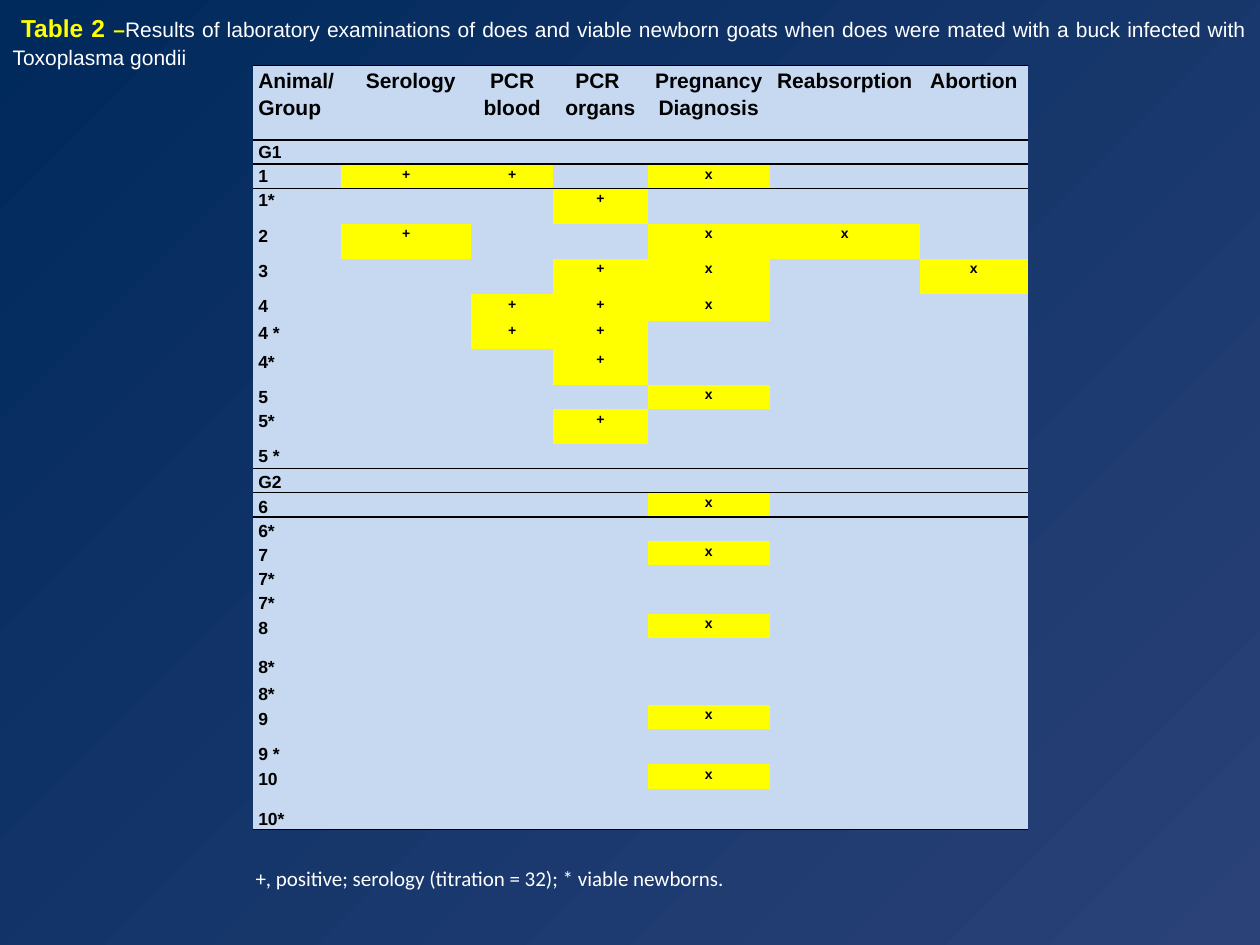
from lxml.etree import SubElement
from pptx import Presentation
from pptx.dml.color import RGBColor
from pptx.enum.text import MSO_ANCHOR, MSO_AUTO_SIZE, PP_ALIGN
from pptx.oxml import parse_xml
from pptx.oxml.ns import nsdecls, qn
from pptx.util import Inches, Pt

PALE, GOLD, BLACK, WHITE = "C6D9F1", "FFFF00", "000000", "FFFFFF"
PLAIN = "{2D5ABB26-0587-4C30-8999-92F81FD0307C}"
LEFT, MID, JUST = PP_ALIGN.LEFT, PP_ALIGN.CENTER, PP_ALIGN.JUSTIFY
COLS = [0.7, 1.03, 0.65, 0.75, 0.97, 1.19, 0.86]
HEADS = [("Animal/\nGroup", 0), ("Serology", 0.07), ("PCR blood", 0), ("PCR \norgans", 0),
         ("Pregnancy Diagnosis", 0), ("Reabsorption", -0.05), ("Abortion", -0.03)]
HEAD_TALL = 0.59
NONE = "......"
FOUND = "...x.."
ROWS = [
    ("G1", 0.18, NONE), ("1", 0.18, "++.x.."), ("1*", 0.28, "..+..."),
    ("2", 0.28, "+..xx."), ("3", 0.28, "..+x.x"), ("4", 0.21, ".++x.."),
    ("4 *", 0.23, ".++..."), ("4*", 0.28, "..+..."), ("5", 0.18, FOUND),
    ("5*", 0.28, "..+..."), ("5 *", 0.19, NONE), ("G2", 0.18, NONE),
    ("6", 0.18, FOUND), ("6*", 0.19, NONE), ("7", 0.18, FOUND),
    ("7*", 0.18, NONE), ("7*", 0.18, NONE), ("8", 0.18, FOUND),
    ("8*", 0.31, NONE), ("8*", 0.22, NONE), ("9", 0.18, FOUND),
    ("9 *", 0.28, NONE), ("10", 0.2, FOUND), ("10*", 0.32, NONE),
]
G2_ROW = 12
RULES = {0, 1, 11, 12, 24}


def tint(code):
    """Turn a hex string into a colour."""
    return RGBColor.from_string(code)


class Deck:
    """Hold the style and the current slide."""

    def __init__(self, wide, high):
        """Start a deck with one titled slide."""
        self.prs = Presentation()
        self.prs.slide_width, self.prs.slide_height = Inches(wide), Inches(high)
        self.slide = self.prs.slides.add_slide(self.prs.slide_layouts[5])

    def ground(self, near, far):
        """Fill the background with a glow from the lower right corner."""
        fill = self.slide.background.fill
        fill.gradient()
        for stop, code in zip(fill.gradient_stops, (near, far)):
            stop.color.rgb = tint(code)
        line = next(self.slide.element.iter(qn("a:lin")))
        line.getparent().replace(line, parse_xml(
            f'<a:path {nsdecls("a")} path="circle"><a:fillToRect l="100000" t="100000"/></a:path>'))

    def run(self, para, text, code, **form):
        """Add one run with its font values."""
        run = para.add_run()
        run.text = text
        run.font.color.rgb = tint(code)
        for key, value in form.items():
            setattr(run.font, key, value)

    def block(self, shape, box, runs, align):
        """Place a shape and set its runs as one paragraph."""
        for key, value in zip(("left", "top", "width", "height"), box):
            setattr(shape, key, Inches(value))
        frame = shape.text_frame
        form = {"word_wrap": True, "vertical_anchor": MSO_ANCHOR.TOP,
                "auto_size": MSO_AUTO_SIZE.SHAPE_TO_FIT_TEXT}
        for key, value in form.items():
            setattr(frame, key, value)
        para = frame.paragraphs[0]
        para.alignment = align
        for text, code, size, name, bold in runs:
            self.run(para, text, code, size=Pt(size), name=name, bold=bold)

    def title(self, box, runs):
        """Fill the title placeholder."""
        self.block(self.slide.shapes.title, box, runs, JUST)

    def note(self, box, runs):
        """Add a text box."""
        shape = self.slide.shapes.add_textbox(*map(Inches, box))
        self.block(shape, box, runs, LEFT)

    def grid(self, left, top, cols, rows):
        """Add a plain table with the given column widths and row heights."""
        frame = self.slide.shapes.add_table(
            len(rows), len(cols), Inches(left), Inches(top), Inches(sum(cols)), Inches(sum(rows)))
        next(frame.element.iter(qn("a:tableStyleId"))).text = PLAIN
        table = frame.table
        table.first_row = table.horz_banding = False
        for col, size in zip(table.columns, cols):
            col.width = Inches(size)
        for row, size in zip(table.rows, rows):
            row.height = Inches(size)
        return table

    def cell(self, cell, text, size, align, code=PALE, indent=0, anchor=MSO_ANCHOR.TOP):
        """Fill one cell and set its lines."""
        form = {"margin_left": Inches(0.04), "margin_right": Inches(0.04),
                "margin_top": 0, "margin_bottom": 0, "vertical_anchor": anchor}
        for key, value in form.items():
            setattr(cell, key, value)
        cell.fill.solid()
        cell.fill.fore_color.rgb = tint(code)
        frame = cell.text_frame
        for i, line in enumerate(text.split("\n")):
            para = frame.add_paragraph() if i else frame.paragraphs[0]
            para.alignment, para.line_spacing = align, 1.15
            if indent:
                para._p.get_or_add_pPr().set("indent", str(Inches(indent)))
            if line:
                self.run(para, line, BLACK, size=Pt(size), name="Arial", bold=True)
            else:
                SubElement(para._p, qn("a:endParaRPr"), sz=str(size * 100))

    def rule(self, cell, sides):
        """Draw black borders on the named sides of a cell."""
        for i, side in enumerate(sides):
            cell._tc.get_or_add_tcPr().insert(i, parse_xml(
                f'<a:ln{side} {nsdecls("a")} w="{Pt(1)}"><a:solidFill>'
                f'<a:srgbClr val="{BLACK}"/></a:solidFill></a:ln{side}>'))


def main():
    """Build the slide and save it."""
    deck = Deck(10, 7.5)
    deck.ground("2A4278", "00295C")
    table = deck.grid(2.01, 0.52, COLS, [HEAD_TALL] + [tall for _, tall, _ in ROWS])
    for c, (text, indent) in enumerate(HEADS):
        deck.cell(table.cell(0, c), text, 12, MID if c else JUST, indent=indent)
    for r, (label, _, marks) in enumerate(ROWS, 1):
        deck.cell(table.cell(r, 0), label, 10, JUST if r > G2_ROW else LEFT,
                  anchor=MSO_ANCHOR.BOTTOM if r >= G2_ROW else MSO_ANCHOR.TOP)
        for c, mark in enumerate(marks, 1):
            blank = mark == "."
            deck.cell(table.cell(r, c), "" if blank else mark, 8, MID, PALE if blank else GOLD)
    for r, row in enumerate(table.rows):
        sides = ("T" if r == 0 or r - 1 in RULES else "") + ("B" if r in RULES else "")
        for cell in row.cells:
            deck.rule(cell, sides)
    deck.title((0, 0, 10, 0.61), [
        (" ", WHITE, 18, "Calibri", False),
        ("Table 2 ", GOLD, 14, "Arial", True),
        ("–", GOLD, 12, "Arial", True),
        ("Results of laboratory examinations of does and viable newborn goats when does were "
         "mated with a buck infected with Toxoplasma gondii", WHITE, 12, "Arial", False)])
    deck.note((1.93, 6.82, 7.63, 0.3), [
        ("+, positive; serology (titration = 32); * viable newborns.", WHITE, 12, "Calibri", False)])
    deck.prs.save("out.pptx")


if __name__ == "__main__":
    main()
